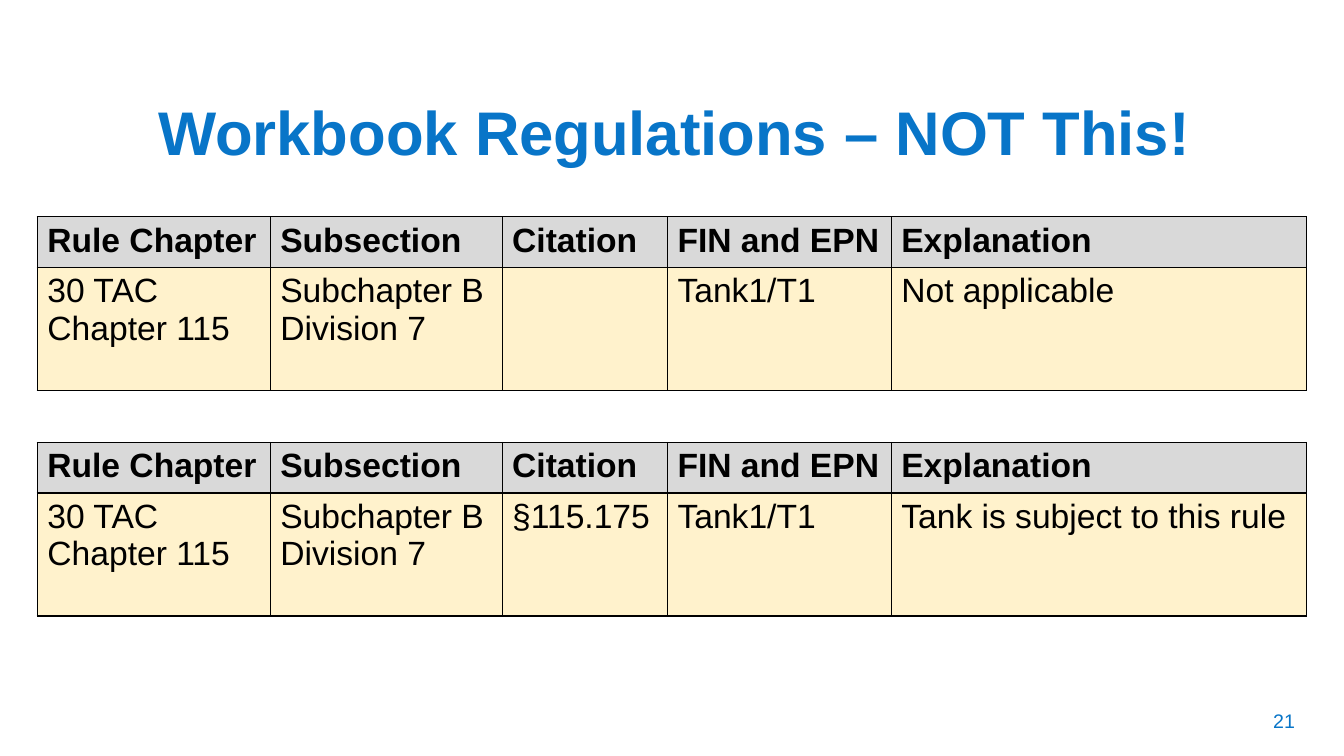
from lxml import etree
from pptx import Presentation
from pptx.dml.color import RGBColor
from pptx.enum.text import MSO_ANCHOR, PP_ALIGN
from pptx.oxml.ns import qn
from pptx.util import Inches, Pt

LEFT, CENTER = PP_ALIGN.LEFT, PP_ALIGN.CENTER
TOP, MIDDLE = MSO_ANCHOR.TOP, MSO_ANCHOR.MIDDLE

# Content
TITLE = "Workbook Regulations – NOT This!"
PAGE_NUMBER = "21"
HEADER = ["Rule Chapter", "Subsection", "Citation", "FIN and EPN", "Explanation"]
RULES = [
    ["30 TAC\nChapter 115", "Subchapter B Division 7", "", "Tank1/T1", "Not applicable"],
    ["30 TAC\nChapter 115", "Subchapter B Division 7", "§115.175", "Tank1/T1",
     "Tank is subject to this rule"],
]

# Style and layout, in inches
FONT = "Arial"
COLORS = {"accent": "0875C8", "text": "000000", "border": "000000",
          "header": "D9D9D9", "body": "FFF2CC"}
COLUMN_WIDTHS = [2.31, 2.3, 1.64, 2.22, 4.12]
ROW_HEIGHTS = [0.47, 1.22]
TABLE_LEFT, TABLE_TOP, TABLE_STEP = 0.37, 2.15, 2.24


def add_text(paragraph, text, size, color, bold=False):
    run = paragraph.add_run()
    run.text = text
    run.font.name = FONT
    run.font.size = Pt(size)
    run.font.bold = bold
    run.font.color.rgb = RGBColor.from_string(COLORS[color])


def add_label(slide, box, text, size, align, anchor, bold=False):
    frame = slide.shapes.add_textbox(*map(Inches, box)).text_frame
    frame.word_wrap = True
    frame.vertical_anchor = anchor
    paragraph = frame.paragraphs[0]
    paragraph.alignment = align
    add_text(paragraph, text, size, "accent", bold)
    return paragraph


def set_borders(cell):
    properties = cell._tc.get_or_add_tcPr()
    for index, side in enumerate(("lnL", "lnR", "lnT", "lnB")):
        line = etree.Element(qn("a:" + side), w=str(Pt(1)))
        fill = etree.SubElement(line, qn("a:solidFill"))
        etree.SubElement(fill, qn("a:srgbClr"), val=COLORS["border"])
        properties.insert(index, line)


def fill_cell(cell, text, is_header):
    cell.fill.solid()
    cell.fill.fore_color.rgb = RGBColor.from_string(COLORS["header" if is_header else "body"])
    set_borders(cell)
    frame = cell.text_frame
    for index, line in enumerate(text.split("\n")):
        paragraph = frame.add_paragraph() if index else frame.paragraphs[0]
        if line:
            add_text(paragraph, line, 24, "text", is_header)


def add_rule_table(slide, top, rows):
    frame = slide.shapes.add_table(
        len(rows), len(HEADER), Inches(TABLE_LEFT), Inches(top),
        Inches(sum(COLUMN_WIDTHS)), Inches(sum(ROW_HEIGHTS)))
    table = frame.table
    table.horz_banding = False
    for column, width in zip(table.columns, COLUMN_WIDTHS):
        column.width = Inches(width)
    for row_index, (texts, height) in enumerate(zip(rows, ROW_HEIGHTS)):
        table.rows[row_index].height = Inches(height)
        for column_index, text in enumerate(texts):
            fill_cell(table.cell(row_index, column_index), text, row_index == 0)


def main():
    presentation = Presentation()
    presentation.slide_width = Inches(13.33)
    presentation.slide_height = Inches(7.5)
    slide = presentation.slides.add_slide(presentation.slide_layouts[6])

    # Title and page number
    title = add_label(slide, (1.47, 0.97, 10.97, 1.45), TITLE, 44, LEFT, TOP, bold=True)
    title.line_spacing = 0.9
    add_label(slide, (12.29, 6.95, 0.89, 0.4), PAGE_NUMBER, 14, CENTER, MIDDLE)

    # One table per rule
    for index, rule in enumerate(RULES):
        add_rule_table(slide, TABLE_TOP + index * TABLE_STEP, [HEADER, rule])

    presentation.save("out.pptx")


if __name__ == "__main__":
    main()
